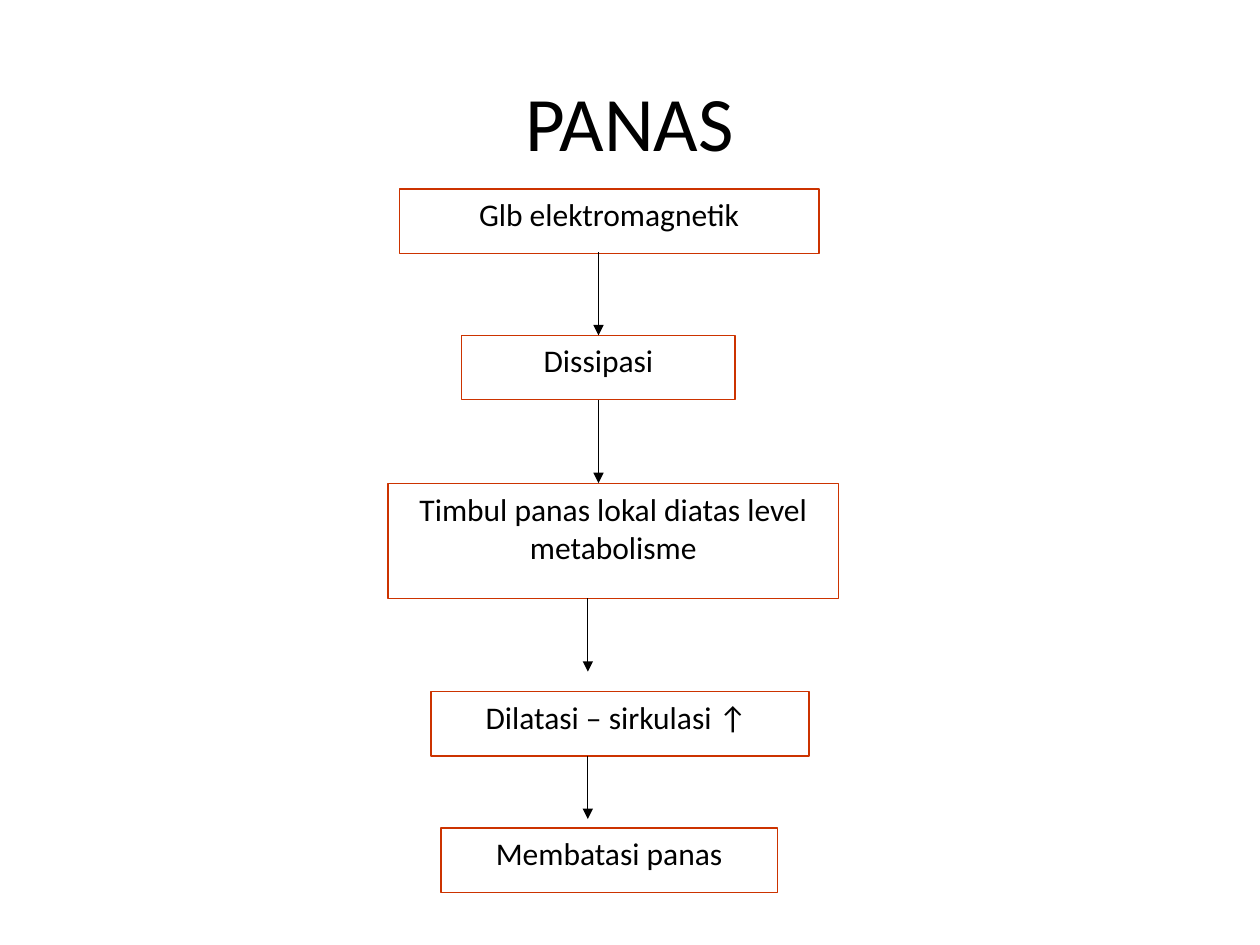
from typing import NamedTuple, Optional

from lxml.etree import SubElement
from pptx import Presentation
from pptx.dml.color import RGBColor
from pptx.enum.shapes import MSO_CONNECTOR, MSO_SHAPE
from pptx.enum.text import MSO_ANCHOR, PP_ALIGN
from pptx.oxml.ns import qn
from pptx.shapes.autoshape import Shape
from pptx.slide import Slide
from pptx.text.text import TextFrame
from pptx.util import Cm, Pt

BLACK = RGBColor(0x00, 0x00, 0x00)
RUST = RGBColor(0xCC, 0x33, 0x00)
FONT = "Calibri"
LINE_WIDTH = Pt(0.75)
TOP, BOTTOM = 0, 2


class Step(NamedTuple):
    """One box of the flow, in centimetres."""
    text: str
    left: float
    top: float
    width: float
    height: float = 1.3


class Arrow(NamedTuple):
    """A downward arrow in centimetres, with the steps it is joined to."""
    x: float
    start: float
    end: float
    source: Optional[int] = None
    target: Optional[int] = None


STEPS = [
    Step("Glb elektromagnetik", 8.05, 3.81, 8.46),
    Step("Dissipasi", 9.31, 6.76, 5.51),
    Step("Timbul panas lokal diatas level metabolisme", 7.82, 9.75, 9.09, 2.31),
    Step("Dilatasi – sirkulasi ↑ ", 8.69, 13.94, 7.62),
    Step("Membatasi panas", 8.89, 16.69, 6.78),
]
ARROWS = [
    Arrow(12.06, 5.08, 6.76, target=1),
    Arrow(12.06, 8.06, 9.74, source=1),
    Arrow(11.85, 12.06, 13.54),
    Arrow(11.85, 15.24, 16.51),
]


def write_text(frame: TextFrame, text: str, size: int, anchor: MSO_ANCHOR) -> None:
    frame.word_wrap = True
    frame.vertical_anchor = anchor
    frame.text = text
    paragraph = frame.paragraphs[0]
    paragraph.alignment = PP_ALIGN.CENTER
    paragraph.font.name = FONT
    paragraph.font.size = Pt(size)
    paragraph.font.color.rgb = BLACK


def draw_title(slide: Slide, text: str) -> None:
    title = slide.shapes.title
    title.left, title.top = Cm(1.9), Cm(1.06)
    title.width, title.height = Cm(21.6), Cm(2.75)
    write_text(title.text_frame, text, 44, MSO_ANCHOR.MIDDLE)


def draw_step(slide: Slide, step: Step) -> Shape:
    box = slide.shapes.add_shape(
        MSO_SHAPE.RECTANGLE,
        Cm(step.left), Cm(step.top), Cm(step.width), Cm(step.height),
    )
    box.shadow.inherit = False
    box.fill.background()
    box.line.color.rgb = RUST
    box.line.width = LINE_WIDTH
    write_text(box.text_frame, step.text, 18, MSO_ANCHOR.TOP)
    return box


def draw_arrow(slide: Slide, arrow: Arrow, boxes: list[Shape]) -> None:
    connector = slide.shapes.add_connector(
        MSO_CONNECTOR.STRAIGHT,
        Cm(arrow.x), Cm(arrow.start), Cm(arrow.x), Cm(arrow.end),
    )
    if arrow.source is not None:
        connector.begin_connect(boxes[arrow.source], BOTTOM)
        connector.end_x = connector.begin_x
    if arrow.target is not None:
        connector.end_connect(boxes[arrow.target], TOP)
        connector.begin_x = connector.end_x
    connector.line.color.rgb = BLACK
    connector.line.width = LINE_WIDTH
    SubElement(connector.line._get_or_add_ln(), qn("a:tailEnd"), type="triangle")
    SubElement(connector._element.spPr, qn("a:effectLst"))


def main() -> None:
    presentation = Presentation()
    presentation.slide_width, presentation.slide_height = Cm(25.4), Cm(19.05)
    title_only = presentation.slide_layouts[5]
    slide = presentation.slides.add_slide(title_only)
    draw_title(slide, "PANAS")
    boxes = [draw_step(slide, step) for step in STEPS]
    for arrow in ARROWS:
        draw_arrow(slide, arrow, boxes)
    presentation.save("out.pptx")


if __name__ == "__main__":
    main()
